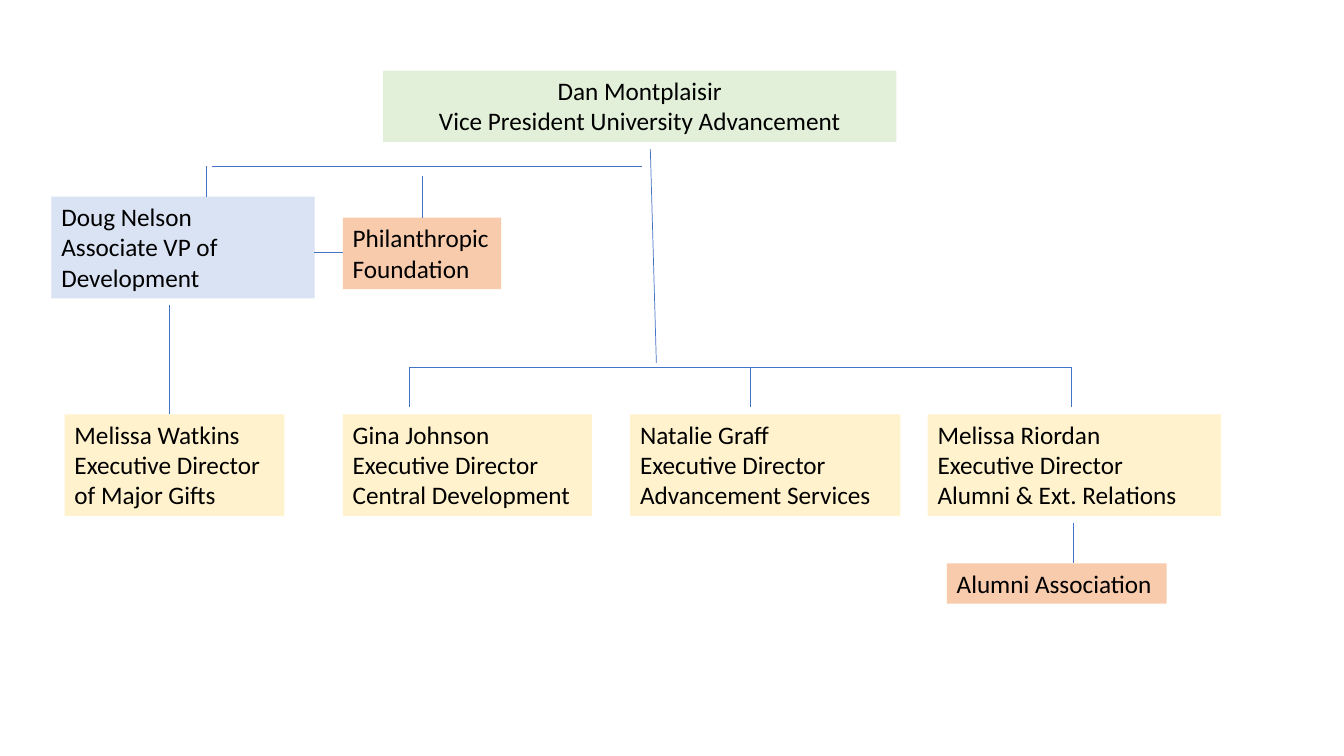
from lxml.etree import SubElement
from pptx import Presentation
from pptx.dml.color import RGBColor
from pptx.enum.shapes import MSO_CONNECTOR
from pptx.enum.text import MSO_AUTO_SIZE, PP_ALIGN
from pptx.oxml.ns import qn
from pptx.util import Inches, Pt

COLORS = {
    "vice": "E2F0D9",
    "associate": "DAE3F3",
    "director": "FFF2CC",
    "partner": "F8CBAD",
    "line": "4472C4",
    "text": "000000",
}
FONT = {"name": "Calibri", "size": Pt(18)}
FRAME = {"word_wrap": True, "auto_size": MSO_AUTO_SIZE.SHAPE_TO_FIT_TEXT}

# Box heights by line count, and the rows of the chart, in inches
HEIGHT = {1: 0.4, 2: 0.71, 3: 1.01}
TOP, UPPER, STAFF, LOWER = 0.7, 1.95, 4.11, 5.59
SIDE = 2.16
LEFT, RAIL, BUS, DROP = 3.4, 1.65, 3.64, 0.4

deck = Presentation()
deck.slide_width, deck.slide_height = Inches(13.33), Inches(7.5)
slide = deck.slides.add_slide(deck.slide_layouts[6])

# role, left, top, width, lines of text, paragraphs
boxes = [
    ("vice", 3.8, TOP, 5.09, 2,
     ["Dan Montplaisir", "Vice President University Advancement"]),
    ("associate", 0.51, UPPER, 2.61, 3,
     ["Doug Nelson", "Associate VP of Development"]),
    ("partner", LEFT, SIDE, 1.57, 2, ["Philanthropic Foundation"]),
    ("director", 0.64, STAFF, 2.18, 3,
     ["Melissa Watkins", "Executive Director of Major Gifts"]),
    ("director", LEFT, STAFF, 2.47, 3,
     ["Gina Johnson", "Executive Director Central Development"]),
    ("director", 6.25, STAFF, 2.68, 3,
     ["Natalie Graff", "Executive Director Advancement Services"]),
    ("director", 9.2, STAFF, 2.91, 3,
     ["Melissa Riordan", "Executive Director", "Alumni & Ext. Relations"]),
    ("partner", 9.39, LOWER, 2.18, 1, ["Alumni Association"]),
]
for role, left, top, width, rows, texts in boxes:
    box = slide.shapes.add_textbox(
        *map(Inches, (left, top, width, HEIGHT[rows])))
    box.fill.solid()
    box.fill.fore_color.rgb = RGBColor.from_string(COLORS[role])
    frame = box.text_frame
    for key, value in FRAME.items():
        setattr(frame, key, value)
    for i, text in enumerate(texts):
        para = frame.add_paragraph() if i else frame.paragraphs[0]
        para.alignment = PP_ALIGN.CENTER if role == "vice" else PP_ALIGN.LEFT
        run = para.add_run()
        run.text = text
        for key, value in FONT.items():
            setattr(run.font, key, value)
        run.font.color.rgb = RGBColor.from_string(COLORS["text"])

# Start x, start y, end x, end y
stems = [4.06, 7.44, 10.63]
links = [
    (1.68, 3.03, 1.68, STAFF),
    (stems[0], BUS, stems[-1], BUS),
    (2.1, RAIL, 6.37, RAIL),
    (6.45, 1.48, 6.51, 3.6),
    (2.05, RAIL, 2.05, UPPER),
    (10.65, LOWER - DROP, 10.65, LOWER),
    (4.19, 1.75, 4.19, SIDE),
    (LEFT, 2.5, 3.11, 2.5),
]
links += [(x, BUS, x, BUS + DROP) for x in stems]
for ends in links:
    link = slide.shapes.add_connector(
        MSO_CONNECTOR.STRAIGHT, *map(Inches, ends))
    link.line.width = Pt(0.5)
    link.line.color.rgb = RGBColor.from_string(COLORS["line"])
    SubElement(link.element.spPr, qn("a:effectLst"))

deck.save("out.pptx")
